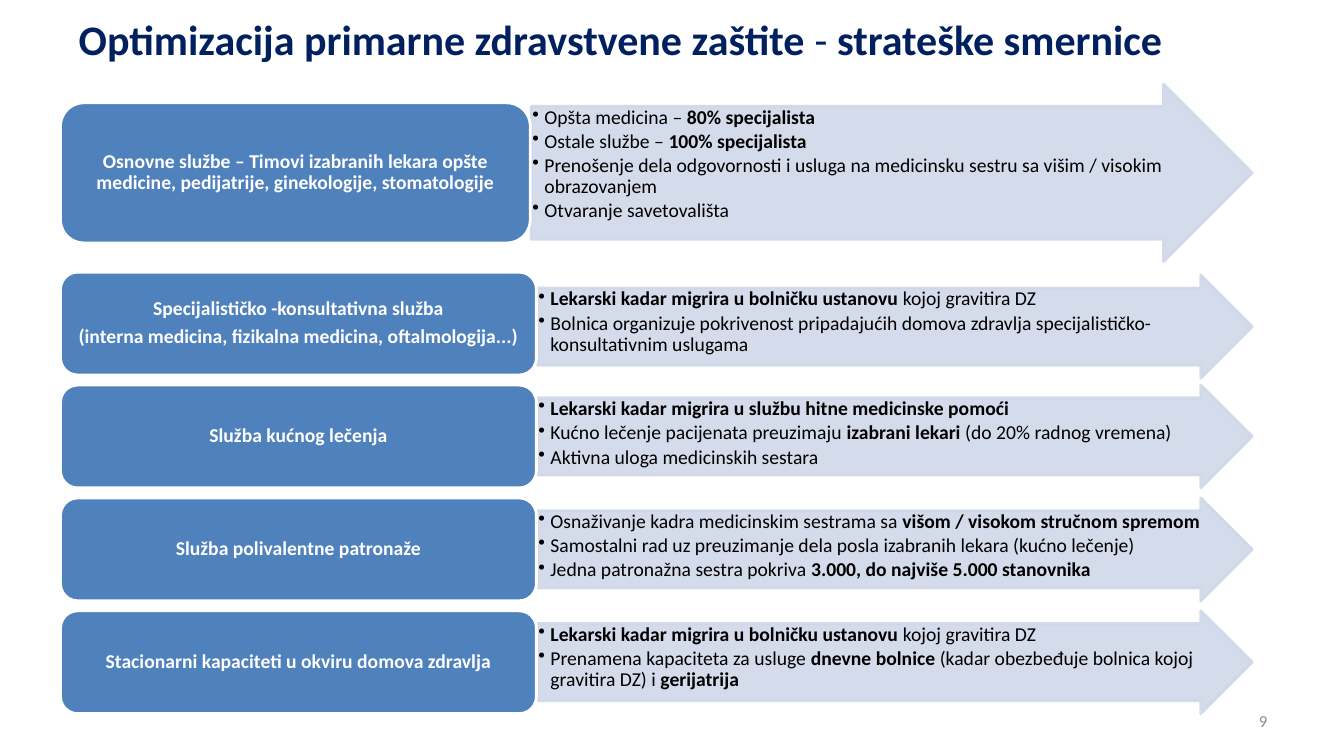
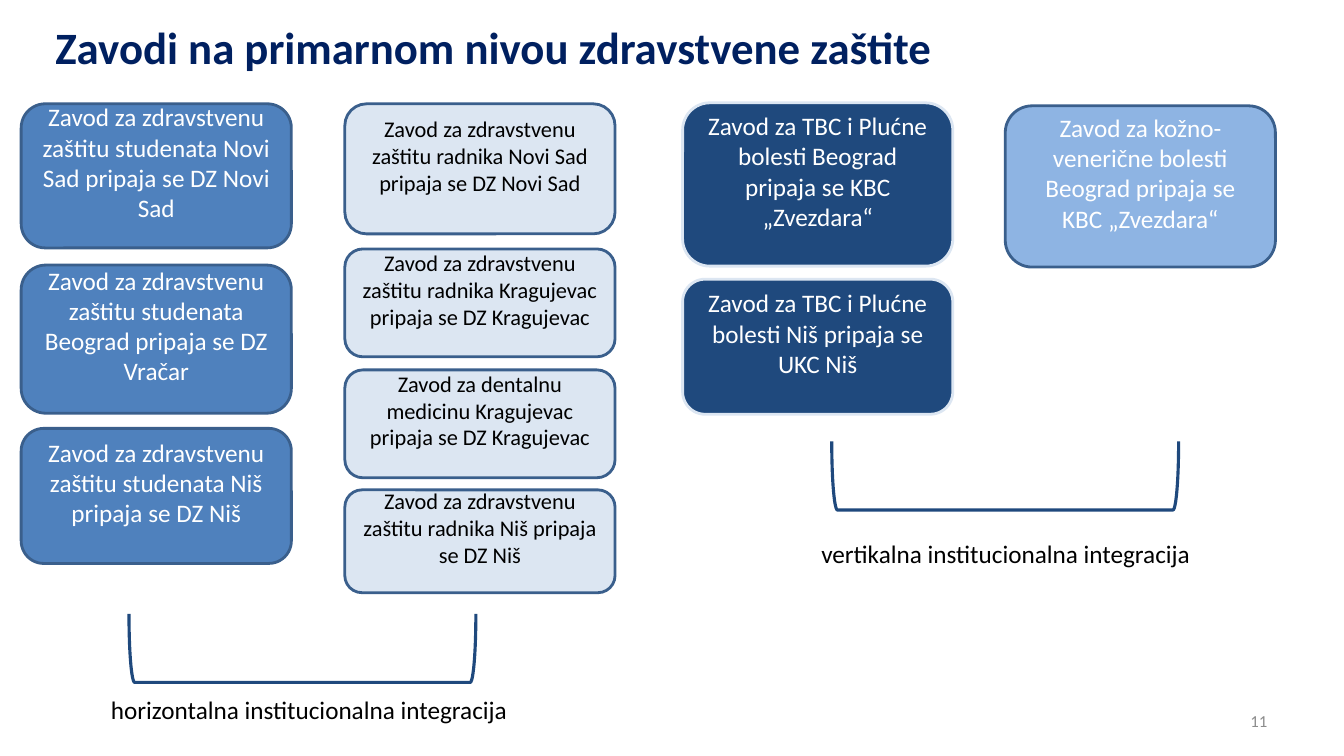
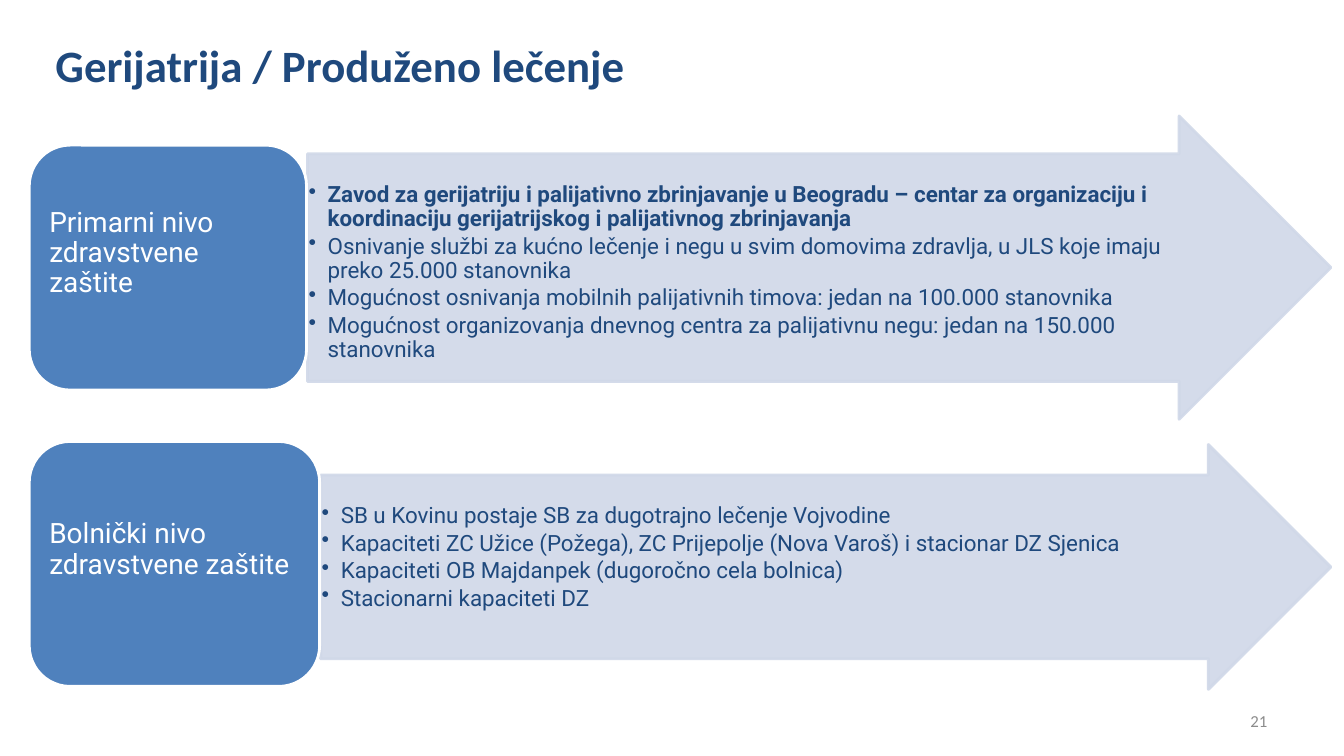
from lxml import etree
from pptx import Presentation
from pptx import util as u
from pptx.dml.color import RGBColor
from pptx.enum import shapes, text
from pptx.oxml import ns

NAVY = RGBColor(0x00, 0x20, 0x60)
DEEP = RGBColor(0x1F, 0x49, 0x7D)
BLUE = RGBColor(0x4F, 0x81, 0xBD)
EDGE = RGBColor(0x3A, 0x5F, 0x8C)
SKY = RGBColor(0x8E, 0xB4, 0xE3)
ICE = RGBColor(0xDC, 0xE6, 0xF2)
MIST = RGBColor(0xD0, 0xD8, 0xE8)
GREY = RGBColor(0x8C, 0x8C, 0x8C)
WHITE = RGBColor(0xFF, 0xFF, 0xFF)
BLACK = RGBColor(0, 0, 0)

CELL = u.Inches(0.1)
KIND = shapes.MSO_SHAPE
SIDE = text.PP_ALIGN
HOLD = text.MSO_ANCHOR


def put(item, vals):
    for key, val in vals.items():
        setattr(item, key, val)


class Deck:
    """Holds the style and the current slide; lengths are in grid cells."""

    def __init__(self):
        self.show = Presentation()
        put(self.show, {"slide_width": u.Inches(13.33), "slide_height": u.Inches(7.5)})

    def page(self, title, number, place, size=32, color=NAVY):
        self.slide = self.show.slides.add_slide(self.show.slide_layouts[5])
        head = self.slide.shapes.title
        put(head, dict(zip(("left", "top", "width", "height"), self.cells(*place))))
        self.label(head, [title], size, color, side=SIDE.LEFT, hold=HOLD.TOP, lead=1.06)
        self.note(str(number), (95.6, 69.5, 31.1, 4), 12, GREY, SIDE.RIGHT, HOLD.MIDDLE)

    def cells(self, *spans):
        return [int(span * CELL) for span in spans]

    def label(self, shape, lines, size, color, font="Calibri", side=SIDE.CENTER,
              hold=HOLD.MIDDLE, lead=1.0, gap=0, pad=(1, 0.5, 1, 0.5), hang=0):
        """Fill a shape with lines; parts between asterisks are bold."""
        frame = shape.text_frame
        names = ("margin_left", "margin_top", "margin_right", "margin_bottom")
        put(frame, dict(zip(names, self.cells(*pad))))
        put(frame, {"auto_size": text.MSO_AUTO_SIZE.NONE, "word_wrap": True,
                    "vertical_anchor": hold})
        for i, line in enumerate(lines):
            para = frame.add_paragraph() if i else frame.paragraphs[0]
            if hang:
                self.bullet(para, hang)
            put(para, {"alignment": side, "line_spacing": lead,
                       "space_before": u.Pt(gap if i else 0)})
            for j, part in enumerate(line.split("*")):
                if part:
                    run = para.add_run()
                    run.text = part
                    put(run.font, {"name": font, "size": u.Pt(size), "bold": j % 2 == 1})
                    run.font.color.rgb = color

    def bullet(self, para, hang):
        props = para._p.get_or_add_pPr()
        span = int(hang * CELL)
        props.set("marL", str(span))
        props.set("indent", str(-span))
        etree.SubElement(props, ns.qn("a:buChar")).set("char", "•")

    def note(self, line, place, size, color=BLACK, side=SIDE.CENTER, hold=HOLD.TOP):
        box = self.slide.shapes.add_textbox(*self.cells(*place))
        self.label(box, [line], size, color, side=side, hold=hold)

    def draw(self, kind, place, fill, line, width=2.0):
        shape = self.slide.shapes.add_shape(kind, *self.cells(*place))
        shape.shadow.inherit = False
        if fill is None:
            shape.fill.background()
        else:
            shape.fill.solid()
            shape.fill.fore_color.rgb = fill
        shape.line.color.rgb = line
        shape.line.width = u.Pt(width)
        return shape

    def arrow(self, place):
        shape = self.draw(KIND.RIGHT_ARROW, place, MIST, MIST)
        shape.adjustments[0] = 0.75
        for tint in shape._element.spPr.iter(ns.qn("a:srgbClr")):
            etree.SubElement(tint, ns.qn("a:alpha")).set("val", "90000")
        return shape

    def band(self, name, facts, place, reach, tall, look, drop=0.0):
        """Draw a name box and the arrow of facts that runs from it to reach."""
        left, top, wide, high = place
        start = left + wide + 0.1
        crest = top + (high - tall) / 2 + drop
        shape = self.arrow((start, crest, reach - start, tall))
        self.label(shape, facts, side=SIDE.LEFT, hold=HOLD.TOP, lead=0.9, **look["facts"])
        shape = self.draw(KIND.ROUNDED_RECTANGLE, place, BLUE, WHITE)
        self.label(shape, name, color=WHITE, lead=0.9, **look["name"])

    def stack(self, left, fill, line, color, size, blocks):
        """Draw one column of boxes given as (top, height, words)."""
        for top, high, words in blocks:
            shape = self.draw(KIND.ROUNDED_RECTANGLE, (left, top, 26.8, high), fill, line)
            self.label(shape, [words], size, color, pad=(1, 0.5, 1, 3.2))

    def brace(self, mid, top, caption, place):
        """Draw an upward bracket centred on mid, with a caption."""
        wide, high = 34.4, 6.8
        shape = self.draw(KIND.LEFT_BRACKET, (mid - high / 2, top + (high - wide) / 2,
                                              high, wide), None, DEEP, 2.25)
        shape.rotation = 270
        self.note(caption, place, 18)


PLAN = {
    "facts": {"size": 14, "color": BLACK, "gap": 2.1, "hang": 1.2, "pad": (0.1,) * 4},
    "name": {"size": 14, "gap": 4.9, "pad": (0.6, 0.3, 0.6, 0.3)},
}
CARE = {
    "facts": {"size": 16, "color": DEEP, "font": "Roboto", "gap": 2.4, "hang": 1.9,
              "pad": (0.1, 2.9, 0.1, 0.1)},
    "name": {"size": 20, "font": "Roboto", "side": SIDE.LEFT, "pad": (0.8, 0.4, 0.8, 3.2)},
}

SERVICES = [
    (["*Specijalističko -konsultativna služba*",
      "*(interna medicina, fizikalna medicina, oftalmologija...)*"],
     ["*Lekarski kadar migrira u bolničku ustanovu *kojoj gravitira DZ",
      "Bolnica organizuje pokrivenost pripadajućih domova zdravlja "
      "specijalističko-konsultativnim uslugama"], 0.3),
    (["*Služba kućnog lečenja*"],
     ["*Lekarski kadar migrira u službu hitne medicinske pomoći*",
      "Kućno lečenje pacijenata preuzimaju *izabrani lekari* (do 20% radnog vremena)",
      "Aktivna uloga medicinskih sestara"], 0),
    (["*Služba polivalentne patronaže*"],
     ["Osnaživanje kadra medicinskim sestrama sa *višom / visokom stručnom spremom*",
      "Samostalni rad uz preuzimanje dela posla izabranih lekara (kućno lečenje)",
      "Jedna patronažna sestra pokriva *3.000, do najviše 5.000 stanovnika*"], 0),
    (["*Stacionarni kapaciteti u okviru domova zdravlja*"],
     ["*Lekarski kadar migrira u bolničku ustanovu *kojoj gravitira DZ",
      "Prenamena kapaciteta za usluge *dnevne bolnice* (kadar obezbeđuje bolnica kojoj "
      "gravitira DZ) i *gerijatrija*"], 0),
]


def reform(deck):
    deck.page("*Optimizacija primarne zdravstvene zaštite* - *strateške smernice*", 9,
              (6.8, 0.5, 112, 6.5), size=30)
    deck.band(["*Osnovne službe – Timovi izabranih lekara opšte medicine, pedijatrije, "
               "ginekologije, stomatologije*"],
              ["Opšta medicina – *80% specijalista*",
               "Ostale službe – *100% specijalista*",
               "Prenošenje dela odgovornosti i usluga na medicinsku sestru sa višim / "
               "visokim obrazovanjem",
               "Otvaranje savetovališta"],
              (6, 10.2, 46.6, 13.9), 124.2, 17.6, PLAN)
    for i, (name, facts, drop) in enumerate(SERVICES):
        deck.band(name, facts, (6, 27 + 11.2 * i, 47.2, 10.2), 124.2, 10.2, PLAN, drop)


def merge(deck):
    deck.page("*Zavodi na primarnom nivou zdravstvene zaštite*", 11, (4.5, 1.1, 110.9, 6.5))
    deck.stack(2.1, BLUE, EDGE, WHITE, 18, [
        (10.3, 14.3, "Zavod za zdravstvenu zaštitu studenata Novi Sad pripaja se DZ Novi Sad"),
        (26.3, 14.7, "Zavod za zdravstvenu zaštitu studenata Beograd pripaja se DZ Vračar"),
        (42.5, 13.4, "Zavod za zdravstvenu zaštitu studenata Niš pripaja se DZ Niš")])
    deck.stack(34.2, ICE, EDGE, BLACK, 16, [
        (10.3, 12.9, "Zavod za zdravstvenu zaštitu radnika Novi Sad pripaja se DZ Novi Sad"),
        (24.7, 10.7, "Zavod za zdravstvenu zaštitu radnika Kragujevac pripaja se DZ Kragujevac"),
        (36.7, 10.7, "Zavod za dentalnu medicinu Kragujevac pripaja se DZ Kragujevac"),
        (48.6, 10.2, "Zavod za zdravstvenu zaštitu radnika Niš pripaja se DZ Niš")])
    deck.stack(67.7, DEEP, ICE, WHITE, 18, [
        (10.2, 16.2, "Zavod za TBC i Plućne bolesti Beograd pripaja se KBC „Zvezdara“"),
        (27.7, 13.4, "Zavod za TBC i Plućne bolesti Niš pripaja se UKC Niš")])
    deck.stack(99.7, SKY, EDGE, WHITE, 18, [
        (10.5, 16, "Zavod za kožno-venerične bolesti Beograd pripaja se KBC „Zvezdara“")])
    deck.brace(30, 60.9, "horizontalna institucionalna integracija", (7.8, 68.4, 45.7, 4.1))
    deck.brace(99.7, 43.8, "vertikalna institucionalna integracija", (76.9, 52.9, 45.7, 4.1))


def elders(deck):
    deck.page("*Gerijatrija / Produženo lečenje*", 21, (4.5, 2.9, 93.6, 6.5), color=DEEP)
    deck.band(["Primarni nivo zdravstvene zaštite"],
              ["*Zavod za gerijatriju i palijativno zbrinjavanje u Beogradu – centar za "
               "organizaciju i koordinaciju gerijatrijskog i palijativnog zbrinjavanja*",
               "Osnivanje službi za kućno lečenje i negu u svim domovima zdravlja, u JLS "
               "koje imaju preko 25.000 stanovnika",
               "Mogućnost osnivanja mobilnih palijativnih timova: jedan na 100.000 stanovnika",
               "Mogućnost organizovanja dnevnog centra za palijativnu negu: jedan na "
               "150.000 stanovnika"],
              (2.9, 14.4, 27.5, 24.3), 132, 30.1, CARE)
    deck.band(["Bolnički nivo zdravstvene zaštite"],
              ["SB u Kovinu postaje SB za dugotrajno lečenje Vojvodine",
               "Kapaciteti ZC Užice (Požega), ZC Prijepolje (Nova Varoš) i stacionar DZ Sjenica",
               "Kapaciteti OB Majdanpek (dugoročno cela bolnica)",
               "Stacionarni kapaciteti DZ"],
              (2.9, 43.8, 28.8, 24.3), 132, 24.3, CARE, 0.3)


def main():
    deck = Deck()
    for build in (reform, merge, elders):
        build(deck)
    deck.show.save("out.pptx")


if __name__ == "__main__":
    main()
